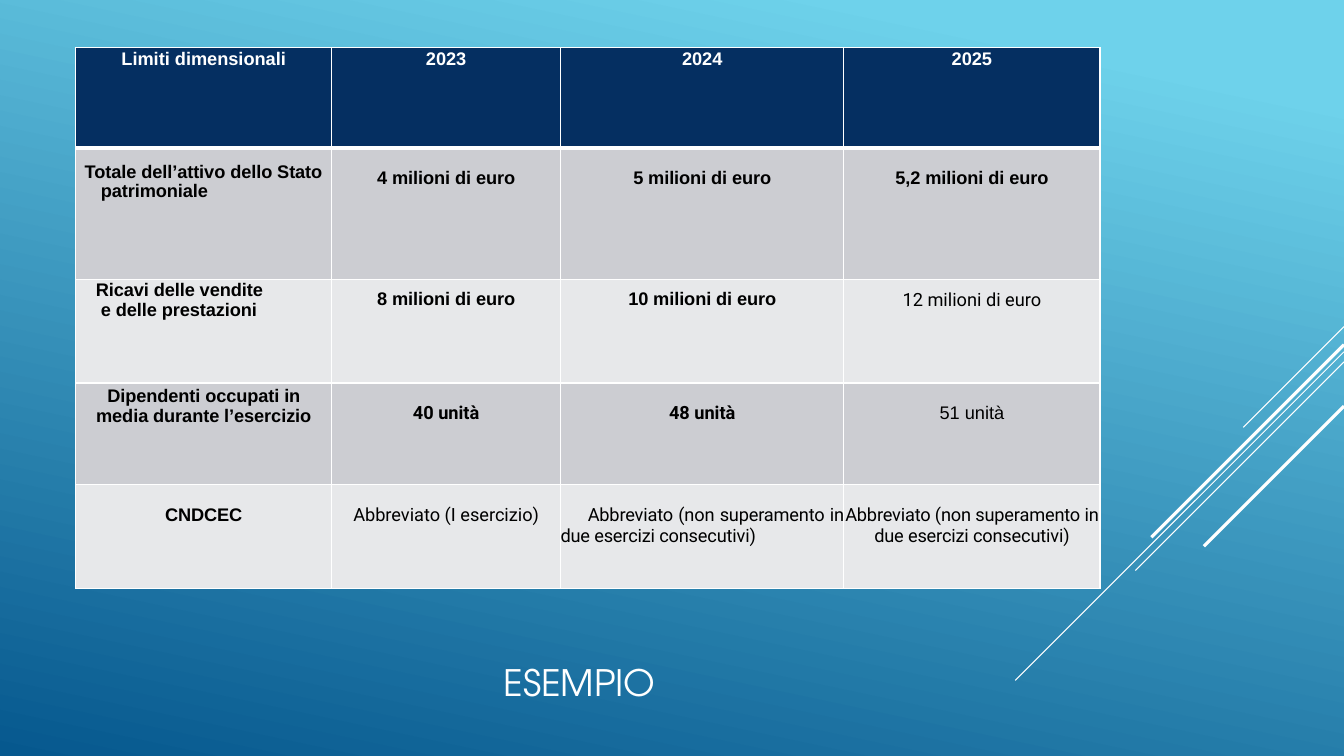
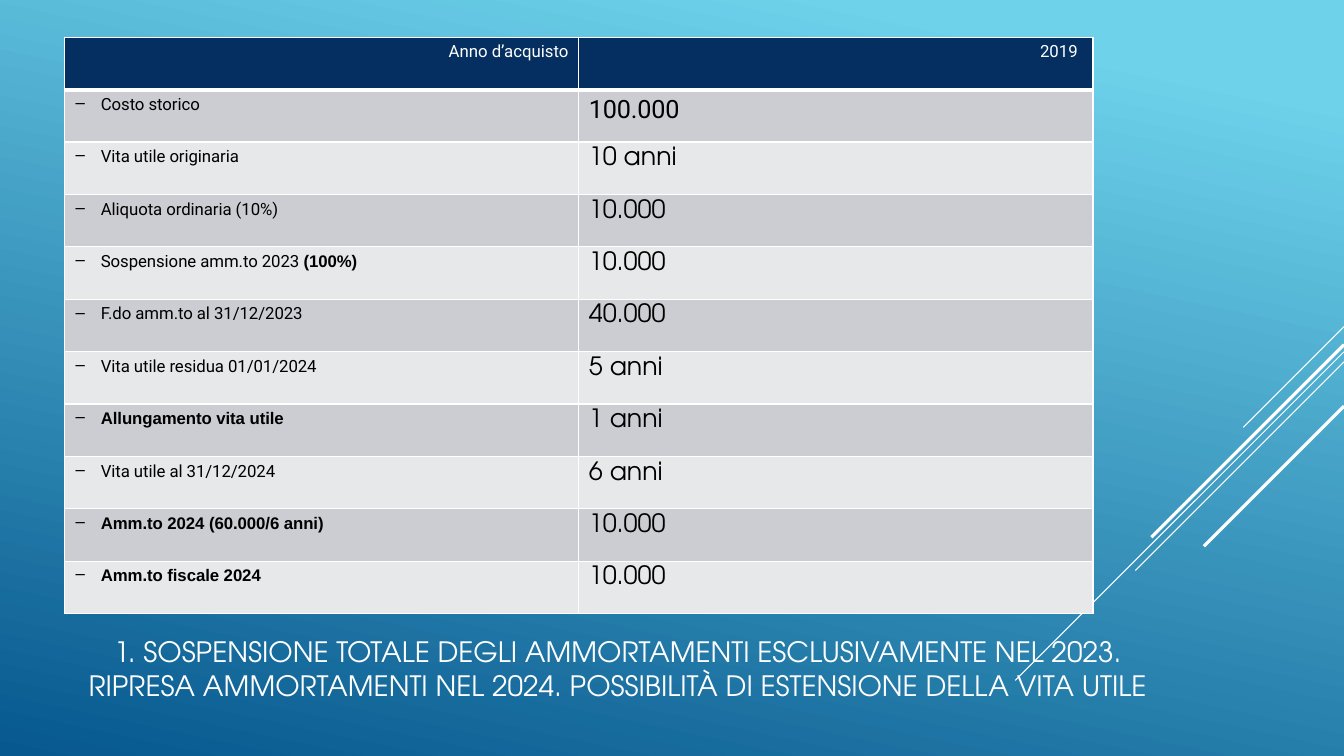
from dataclasses import dataclass

from lxml.etree import SubElement
from pptx import Presentation
from pptx.dml.color import RGBColor
from pptx.enum.text import MSO_ANCHOR, MSO_AUTO_SIZE, PP_ALIGN
from pptx.oxml.ns import qn
from pptx.util import Inches, Pt


# Content: a cell is a list of paragraphs or one paragraph;
# a paragraph is a list of (text, style) runs
LIMITS_TITLE = "ESEMPIO"
LIMITS_HEADER = ["Limiti dimensionali", "2023", "2024", "2025"]
LIMITS_ROWS = [
    [("Totale dell’attivo dello Stato patrimoniale", "strong"),
     ("4 milioni di euro", "strong"),
     ("5 milioni di euro", "strong"),
     ("5,2 milioni di euro", "strong")],
    [("Ricavi delle vendite\ne delle prestazioni", "strong"),
     ("8 milioni di euro", "strong"),
     ("10 milioni di euro", "strong"),
     ("12 milioni di euro", "plain")],
    [("Dipendenti occupati in media durante l’esercizio", "strong"),
     ("40 unità", "strong_roboto"),
     ("48 unità", "strong_roboto"),
     ("51 unità", "plain_arial")],
    [("CNDCEC", "strong"),
     ("Abbreviato (I esercizio)", "plain"),
     ("Abbreviato (non superamento in due esercizi consecutivi)", "tight"),
     ("Abbreviato (non superamento in due esercizi consecutivi)", "tight")],
]

ASSET_TITLE = ("1. SOSPENSIONE TOTALE DEGLI AMMORTAMENTI ESCLUSIVAMENTE NEL 2023. "
               "RIPRESA AMMORTAMENTI NEL 2024. POSSIBILITÀ DI ESTENSIONE DELLA VITA UTILE")
ASSET_HEADER = ["Anno d’acquisto", "2019"]
ASSET_ROWS = [
    ([("Costo storico", "label")], ("100.000", "first_value")),
    ([("Vita utile originaria", "label")], ("10 anni", "value")),
    ([("Aliquota ordinaria (10%)", "label")], ("10.000", "value")),
    ([("Sospensione amm.to 2023 ", "label"), ("(100%)", "label_strong")],
     ("10.000", "value")),
    ([("F.do amm.to al 31/12/2023", "label")], ("40.000", "value")),
    ([("Vita utile residua 01/01/2024", "label")], ("5 anni", "value")),
    ([("Allungamento vita utile", "label_strong")], ("1 anni", "value")),
    ([("Vita utile al 31/12/2024", "label")], ("6 anni", "value")),
    ([("Amm.to 2024 (60.000/6 anni)", "label_strong")], ("10.000", "value")),
    ([("Amm.to fiscale 2024", "label_strong")], ("10.000", "value")),
]


@dataclass(frozen=True)
class TextStyle:
    font: str
    size: float
    color: str = "000000"
    bold: bool = False
    tracking: float = 0


class Theme:
    white = "FFFFFF"
    header_fill = "052F61"
    band_fills = ("CCCDD2", "E7E8EA")
    gradient = ((0.1, "6ED2EB"), (1.0, "06588E"))
    gradient_angle = 258
    thin, thick = 1, 3
    text = {
        "title": TextStyle("TeX Gyre Adventor", 26, white),
        "long_title": TextStyle("TeX Gyre Adventor", 20, white),
        "limits_header": TextStyle("Arial", 13, white, True),
        "strong": TextStyle("Arial", 13, bold=True, tracking=-0.05),
        "strong_roboto": TextStyle("Roboto", 13, bold=True),
        "plain": TextStyle("Roboto", 13),
        "plain_arial": TextStyle("Arial", 13),
        "tight": TextStyle("Roboto", 13, tracking=-0.1),
        "asset_header": TextStyle("Roboto", 12, white),
        "label": TextStyle("Roboto", 12, tracking=-0.05),
        "label_strong": TextStyle("Arial", 12, bold=True, tracking=-0.05),
        "first_value": TextStyle("Roboto", 18, tracking=-0.1),
        "value": TextStyle("TeX Gyre Adventor", 18),
    }


# Diagonal lines: start height at the right edge, horizontal run, width
SLIDE_WIDTH, SLIDE_HEIGHT = 13.33, 7.5
DIAGONALS = [(3.24, 1, 0.75), (3.49, 3.26, 0.75), (3.59, 2.07, 0.75),
             (3.42, 1.91, 2.25), (4.03, 1.39, 2.25)]


def add_run(paragraph, text, style_name):
    style = Theme.text[style_name]
    run = paragraph.add_run()
    run.text = text
    run.font.name = style.font
    run.font.size = Pt(style.size)
    run.font.bold = style.bold
    run.font.color.rgb = RGBColor.from_string(style.color)
    if style.tracking:
        run.font._element.set("spc", str(round(style.tracking * 100)))


def set_indent(paragraph, left, first_line=0):
    properties = paragraph._p.get_or_add_pPr()
    properties.set("marL", str(Inches(left)))
    properties.set("indent", str(Inches(first_line)))
    return properties


def set_margins(cell, left=0, top=0, right=0, bottom=0):
    cell.margin_left, cell.margin_top = Inches(left), Inches(top)
    cell.margin_right, cell.margin_bottom = Inches(right), Inches(bottom)


def set_borders(cell, bottom_width):
    properties = cell._tc.get_or_add_tcPr()
    widths = {"a:lnL": Theme.thin, "a:lnR": Theme.thin,
              "a:lnT": Theme.thin, "a:lnB": bottom_width}
    for position, (tag, width) in enumerate(widths.items()):
        line = SubElement(properties, qn(tag), w=str(Pt(width)))
        fill = SubElement(line, qn("a:solidFill"))
        SubElement(fill, qn("a:srgbClr"), val=Theme.white)
        properties.insert(position, line)


def add_table(slide, left, top, columns, rows):
    """Add a banded table with white borders and a dark header."""
    table = slide.shapes.add_table(
        len(rows), len(columns), Inches(left), Inches(top),
        Inches(sum(columns)), Inches(sum(rows))).table
    for column, width in zip(table.columns, columns):
        column.width = Inches(width)
    for index, (row, height) in enumerate(zip(table.rows, rows)):
        row.height = Inches(height)
        color = Theme.band_fills[(index - 1) % 2] if index else Theme.header_fill
        for cell in row.cells:
            cell.fill.solid()
            cell.fill.fore_color.rgb = RGBColor.from_string(color)
            set_borders(cell, Theme.thin if index else Theme.thick)
    return table


def add_title_slide(presentation, layout, text, style_name, box):
    slide = presentation.slides.add_slide(layout)
    title = slide.shapes.title
    title.left, title.top, title.width, title.height = map(Inches, box)
    frame = title.text_frame
    frame.auto_size = MSO_AUTO_SIZE.NONE
    frame.word_wrap = True
    frame.vertical_anchor = MSO_ANCHOR.MIDDLE
    frame.margin_left = frame.margin_right = Inches(0.05)
    frame.paragraphs[0].alignment = PP_ALIGN.CENTER
    add_run(frame.paragraphs[0], text, style_name)
    return slide


def decorate_layout(layout, slide):
    """Give the layout its gradient and its diagonal lines."""
    fill = layout.background.fill
    fill.gradient()
    fill.gradient_angle = Theme.gradient_angle
    for stop, (position, color) in zip(fill.gradient_stops, Theme.gradient):
        stop.position = position
        stop.color.rgb = RGBColor.from_string(color)
    for top, run, width in DIAGONALS:
        line = slide.shapes.add_connector(
            1, Inches(SLIDE_WIDTH), Inches(top),
            Inches(SLIDE_WIDTH - run), Inches(top + run))
        line.line.color.rgb = RGBColor.from_string(Theme.white)
        line.line.width = Pt(width)
        SubElement(line.element.spPr, qn("a:effectLst"))
        layout.shapes.element.append(line.element)


def fill_limits_table(slide):
    table = add_table(slide, 0.75, 0.47, [2.54, 2.27, 2.81, 2.54],
                      [1, 1.3, 1.03, 1.01, 1.03])
    for cell, text in zip(table.rows[0].cells, LIMITS_HEADER):
        set_margins(cell)
        paragraph = cell.text_frame.paragraphs[0]
        paragraph.alignment = PP_ALIGN.CENTER
        paragraph.line_spacing = Pt(15.5)
        add_run(paragraph, text, "limits_header")

    label_tops = [0.14, 0, 0.04, 0.2]
    value_tops = [0.2, 0.1, 0.2, 0.2]
    for row_index, row in enumerate(LIMITS_ROWS):
        for column_index, (text, style_name) in enumerate(row):
            cell = table.cell(row_index + 1, column_index)
            tops = value_tops if column_index else label_tops
            set_margins(cell, top=tops[row_index])
            for line_index, line in enumerate(text.split("\n")):
                frame = cell.text_frame
                paragraph = frame.add_paragraph() if line_index else frame.paragraphs[0]
                paragraph.alignment = PP_ALIGN.CENTER
                add_run(paragraph, line, style_name)

    # Row labels and the justified cell have their own indents
    total, revenue, staff = (table.cell(row, 0) for row in (1, 2, 3))
    set_margins(staff, left=0.17, top=0.04, right=0.17)
    for cell, spacing in ((total, 14), (revenue, 14.8), (staff, 14)):
        for paragraph in cell.text_frame.paragraphs:
            paragraph.line_spacing = Pt(spacing)
    for cell, indents in ((total, [(0.25, -0.16)]), (revenue, [(0.2, 0), (0.25, 0)])):
        for paragraph, indent in zip(cell.text_frame.paragraphs, indents):
            paragraph.alignment = PP_ALIGN.LEFT
            set_indent(paragraph, *indent)
    justified = table.cell(4, 2).text_frame.paragraphs[0]
    justified.alignment = PP_ALIGN.JUSTIFY
    set_indent(justified, 0, 0.27)


def fill_asset_table(slide):
    table = add_table(slide, 0.64, 0.37, [5.1] * 2, [0.52] * (len(ASSET_ROWS) + 1))
    for cell, text in zip(table.rows[0].cells, ASSET_HEADER):
        paragraph = cell.text_frame.paragraphs[0]
        paragraph.alignment = PP_ALIGN.RIGHT
        add_run(paragraph, text, "asset_header")
    table.cell(0, 1).margin_right = Inches(0.15)

    for row_index, (label_runs, value_run) in enumerate(ASSET_ROWS, start=1):
        label = table.cell(row_index, 0).text_frame.paragraphs[0]
        SubElement(set_indent(label, 0.26, -0.25), qn("a:buChar"), char="–")
        for text, style_name in label_runs:
            add_run(label, text, style_name)
        add_run(table.cell(row_index, 1).text_frame.paragraphs[0], *value_run)


def main():
    presentation = Presentation()
    presentation.slide_width = Inches(SLIDE_WIDTH)
    presentation.slide_height = Inches(SLIDE_HEIGHT)
    layout = presentation.slide_layouts[5]

    limits_slide = add_title_slide(presentation, layout, LIMITS_TITLE, "title",
                                   (0.75, 6.51, 10, 0.52))
    decorate_layout(layout, limits_slide)
    fill_limits_table(limits_slide)

    asset_slide = add_title_slide(presentation, layout, ASSET_TITLE, "long_title",
                                  (0.77, 6.21, 10.72, 0.84))
    fill_asset_table(asset_slide)
    presentation.save("out.pptx")


if __name__ == "__main__":
    main()
